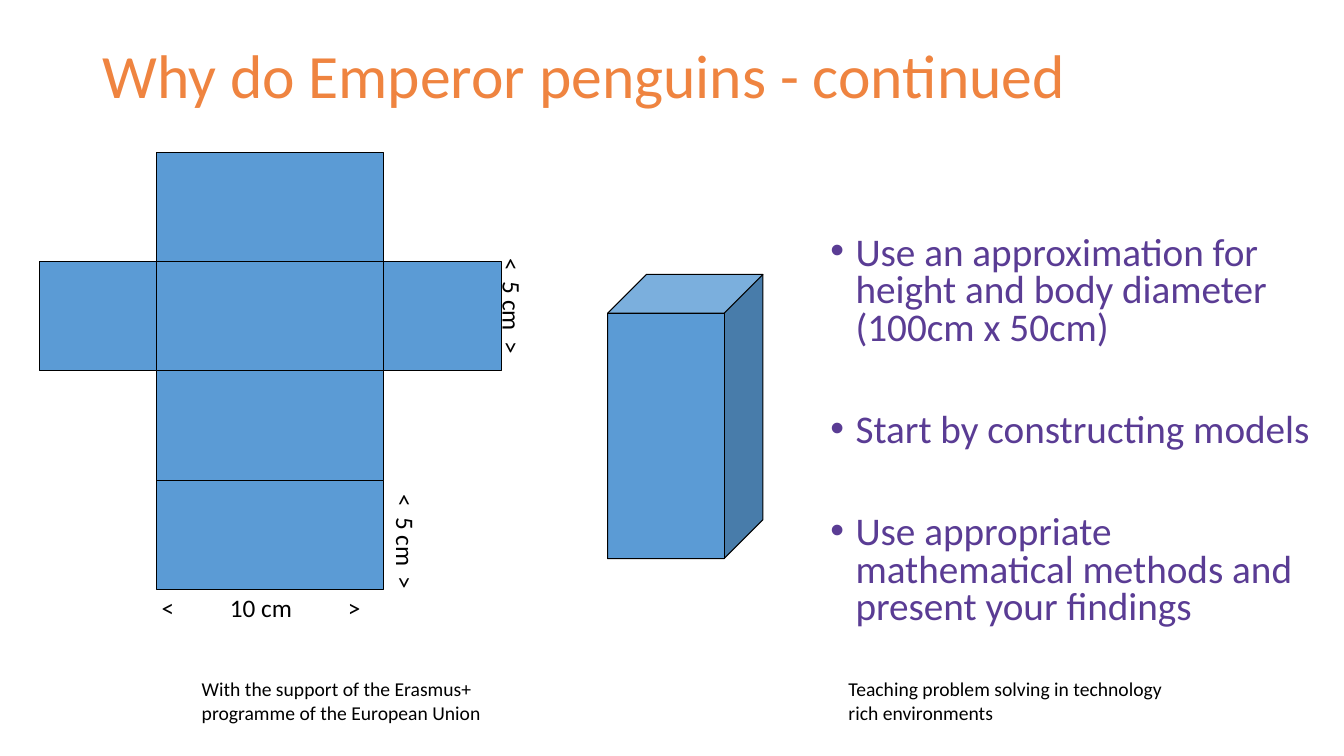
from lxml import etree
from pptx import Presentation
from pptx.dml.color import RGBColor
from pptx.enum import shapes, text
from pptx.oxml import ns
from pptx.util import Pt

TITLE = "Why do Emperor penguins - continued"
TASKS = [
    "Use an approximation for height and body diameter (100cm x 50cm)",
    "Start by constructing models",
    "Use appropriate mathematical methods and present your findings",
]
# text, left, top, width, height
FOOTERS = [
    ("With the support of the Erasmus+ programme of the European Union", 137, 480, 248, 42),
    ("Teaching problem solving in technology rich environments", 599, 480, 258, 41),
]
# text, centre x, centre y, span, rotation
SIZES = [
    ("10 cm", 187.5, 434, 142, 0),
    ("5 cm", 366, 220, 68, 90),
    ("5 cm", 290, 388, 68, 90),
]
LEFT, TOP, WIDE, HIGH, FLAP = 112, 109, 162, 78, 84
CUBE = (434, 196, 111, 203)
BLUE, BLACK, ORANGE, PURPLE = "5B9BD5", "000000", "EF8440", "5A3C94"
INSET = 7.2


def color(code):
    return RGBColor.from_string(code)


def add_solid(kind, left, top, width, height):
    solid = slide.shapes.add_shape(kind, Pt(left), Pt(top), Pt(width), Pt(height))
    solid.shadow.inherit = False
    solid.fill.solid()
    solid.fill.fore_color.rgb = color(BLUE)
    solid.line.color.rgb = color(BLACK)
    solid.line.width = Pt(0.75)


def style(para, size, code):
    para.font.name = "Calibri"
    para.font.size = Pt(size)
    para.font.color.rgb = color(code)


def add_text(lines, left, top, width, height, size, code=BLACK):
    box = slide.shapes.add_textbox(Pt(left), Pt(top), Pt(width), Pt(height))
    frame = box.text_frame
    frame.word_wrap = True
    frame.vertical_anchor = text.MSO_ANCHOR.TOP
    frame.text = "\n".join(lines)
    for para in frame.paragraphs:
        style(para, size, code)
    return box


def add_size(label, x, y, span, turn):
    """Add a dimension label with its marks at both ends of the span."""
    width, height = span + 2 * INSET + 2, 29
    box = add_text([f"<\t{label}\t>"], x - width / 2, y - height / 2, width, height, 18)
    box.rotation = turn
    props = box.text_frame.paragraphs[0]._p.get_or_add_pPr()
    tabs = etree.SubElement(props, ns.qn("a:tabLst"))
    props.insert(0, tabs)
    for pos, align in ((span / 2, "ctr"), (span, "r")):
        etree.SubElement(tabs, ns.qn("a:tab"), pos=str(int(Pt(pos))), algn=align)


def add_tasks():
    frame = add_text(TASKS, 586, 165, 359, 322, 28, PURPLE).text_frame
    for i, para in enumerate(frame.paragraphs):
        para.line_spacing = 0.8
        para.space_before = Pt(46 if i else 0)
        props = para._p.get_or_add_pPr()
        props.set("marL", str(int(Pt(18))))
        props.set("indent", str(int(Pt(-18))))
        font = etree.Element(ns.qn("a:buFont"), typeface="Arial")
        mark = etree.Element(ns.qn("a:buChar"), char="•")
        run = props.find(ns.qn("a:defRPr"))
        run.addprevious(font)
        run.addprevious(mark)


deck = Presentation()
deck.slide_width, deck.slide_height = Pt(960), Pt(540)
slide = deck.slides.add_slide(deck.slide_layouts[6])

for words, *place in FOOTERS:
    add_text([words], *place, 14)

rect = shapes.MSO_SHAPE.RECTANGLE
for row in range(4):
    add_solid(rect, LEFT, TOP + row * HIGH, WIDE, HIGH)
for left in (LEFT - FLAP, LEFT + WIDE):
    add_solid(rect, left, TOP + HIGH, FLAP, HIGH)
for entry in SIZES:
    add_size(*entry)
add_solid(shapes.MSO_SHAPE.CUBE, *CUBE)

add_tasks()
title = add_text([TITLE], 66, 29, 828, 104, 44, ORANGE)
title.text_frame.paragraphs[0].line_spacing = 0.9

deck.save("out.pptx")
